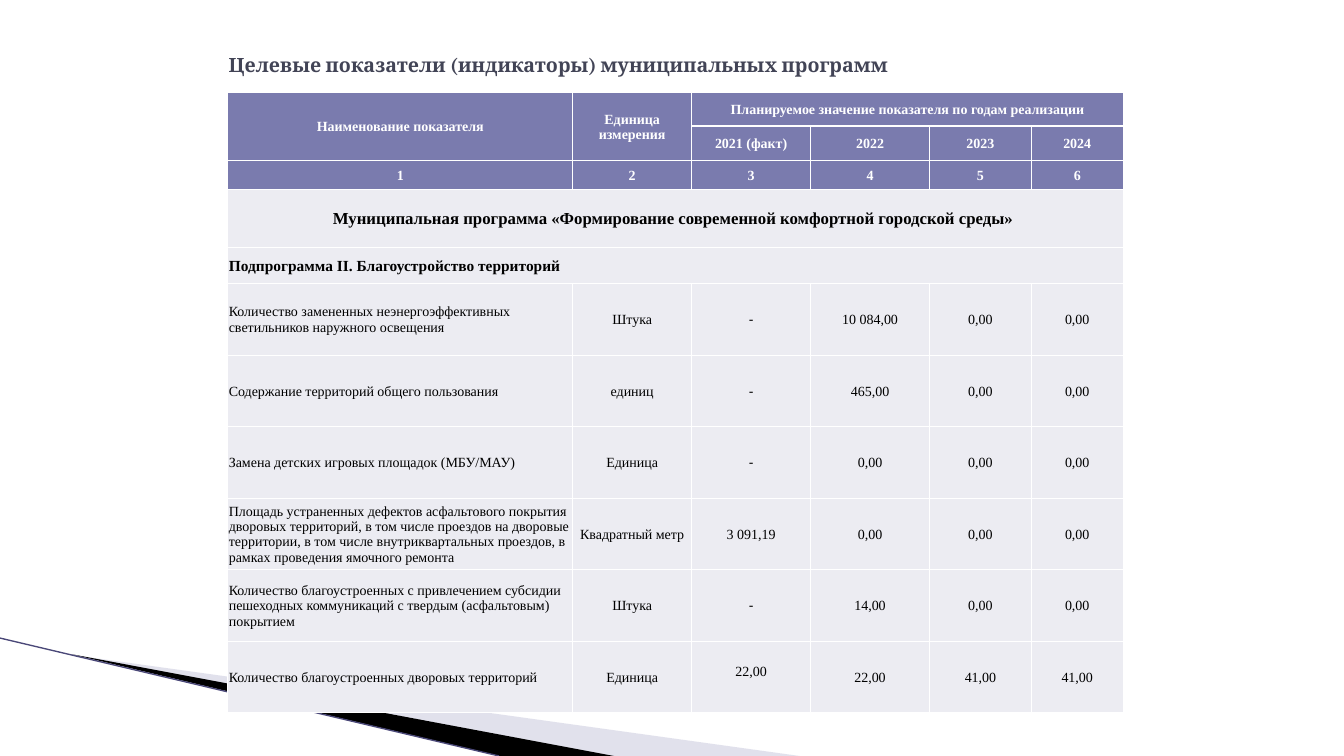
from lxml.etree import SubElement
from pptx import Presentation
from pptx.dml.color import RGBColor
from pptx.enum.shapes import MSO_CONNECTOR
from pptx.enum.text import MSO_ANCHOR, PP_ALIGN
from pptx.oxml.ns import qn
from pptx.util import Inches, Pt

WHITE = RGBColor(0xFF, 0xFF, 0xFF)
BLACK = RGBColor(0, 0, 0)
SLATE = RGBColor(0x42, 0x44, 0x56)
VIOLET = RGBColor(0x7A, 0x7B, 0xAE)
PALE = RGBColor(0xEC, 0xEC, 0xF2)
LILAC = RGBColor(0xB6, 0xB6, 0xD1)
INDIGO = RGBColor(0x4A, 0x48, 0x78)

WIDTHS = [3.42, 1.18, 1.18, 1.18, 1.01, 0.91]
HEIGHTS = [0.33, 0.32, 0.29, 0.57, 0.36] + [0.71] * 6
HEADS = 3
ROWS = [
    ["Наименование показателя", "Единица измерения",
     "Планируемое значение показателя по годам реализации", "", "", ""],
    ["", "", "2021 (факт)", "2022", "2023", "2024"],
    ["1", "2", "3", "4", "5", "6"],
    ["Муниципальная программа «Формирование современной комфортной городской среды» "] + [""] * 5,
    ["Подпрограмма II. Благоустройство территорий"] + [""] * 5,
    ["Количество замененных неэнергоэффективных светильников наружного освещения",
     "Штука", "-", "10 084,00", "0,00", "0,00"],
    ["Содержание территорий общего пользования",
     "единиц", "-", "465,00", "0,00", "0,00"],
    ["Замена детских игровых площадок (МБУ/МАУ)",
     "Единица", "-", "0,00", "0,00", "0,00"],
    ["Площадь устраненных дефектов асфальтового покрытия дворовых территорий, "
     "в том числе проездов на дворовые территории, в том числе внутриквартальных "
     "проездов, в рамках проведения ямочного ремонта",
     "Квадратный метр", "3 091,19", "0,00", "0,00", "0,00"],
    ["Количество благоустроенных с привлечением субсидии пешеходных коммуникаций "
     "с твердым (асфальтовым) покрытием",
     "Штука", "-", "14,00", "0,00", "0,00"],
    ["Количество благоустроенных дворовых территорий",
     "Единица", "22,00", "22,00", "41,00", "41,00"],
]
SPANS = [(0, 0, 1, 0), (0, 1, 1, 1), (0, 2, 0, 5), (3, 0, 3, 5), (4, 0, 4, 5)]


def write(frame, text, size=10, font="Times New Roman", color=BLACK, bold=False,
          align=PP_ALIGN.LEFT):
    part = frame.paragraphs[0]
    part.alignment = align
    run = part.add_run()
    run.text = text
    run.font.size = Pt(size)
    run.font.name = font
    run.font.bold = bold
    run.font.color.rgb = color


class Deck:
    def __init__(self, slide):
        self.slide = slide
        self.shapes = slide.shapes

    def wedge(self, points, color, alpha=None):
        spots = [(Inches(x), Inches(y)) for x, y in points]
        form = self.shapes.build_freeform(*spots[0])
        form.add_line_segments(spots[1:], close=True)
        shape = form.convert_to_shape()
        shape.shadow.inherit = False
        shape.fill.solid()
        shape.fill.fore_color.rgb = color
        shape.line.fill.background()
        if alpha:
            tint = shape.fill._xPr.find(qn("a:solidFill"))[0]
            SubElement(tint, qn("a:alpha"), val=str(alpha * 1000))

    def line(self, start, end, color, width):
        ends = [Inches(v) for v in start + end]
        link = self.shapes.add_connector(MSO_CONNECTOR.STRAIGHT, *ends)
        link.line.color.rgb = color
        link.line.width = Pt(width)
        SubElement(link._element.spPr, qn("a:effectLst"))

    def title(self, text, left, top, width, height):
        box = self.shapes.add_textbox(*map(Inches, (left, top, width, height)))
        frame = box.text_frame
        frame.word_wrap = True
        frame.vertical_anchor = MSO_ANCHOR.MIDDLE
        write(frame, text, size=14, font="Cambria", color=SLATE, bold=True)

    def border(self, cell):
        props = cell._tc.get_or_add_tcPr()
        for place, side in enumerate(("lnL", "lnR", "lnT", "lnB")):
            edge = props.makeelement(qn("a:" + side), {"w": str(Pt(1))})
            fill = SubElement(edge, qn("a:solidFill"))
            SubElement(fill, qn("a:srgbClr"), val=str(WHITE))
            props.insert(place, edge)

    def cell(self, cell, text, fill, **style):
        cell.margin_left = cell.margin_right = cell.margin_top = Inches(0.01)
        cell.margin_bottom = 0
        cell.vertical_anchor = MSO_ANCHOR.MIDDLE
        cell.fill.solid()
        cell.fill.fore_color.rgb = fill
        self.border(cell)
        if text:
            write(cell.text_frame, text, **style)

    def table(self, left, top):
        size = sum(WIDTHS), sum(HEIGHTS)
        grid = self.shapes.add_table(len(ROWS), len(WIDTHS),
                                     *map(Inches, (left, top, *size))).table
        for col, width in zip(grid.columns, WIDTHS):
            col.width = Inches(width)
        for row, height in zip(grid.rows, HEIGHTS):
            row.height = Inches(height)
        for r, row in enumerate(ROWS):
            head = r < HEADS
            for c, text in enumerate(row):
                flush = c == 0 and r > HEADS
                self.cell(grid.cell(r, c), text, VIOLET if head else PALE,
                          size={3: 12, 4: 11}.get(r, 10),
                          font="Arial" if text == "-" else "Times New Roman",
                          color=WHITE if head else BLACK, bold=r < 5,
                          align=PP_ALIGN.LEFT if flush else PP_ALIGN.CENTER)
        for r, c, low, far in SPANS:
            grid.cell(r, c).merge(grid.cell(low, far))
        grid.cell(len(ROWS) - 1, 2).margin_bottom = Inches(0.12)


def main():
    show = Presentation()
    show.slide_width = Inches(13.33)
    show.slide_height = Inches(7.5)
    deck = Deck(show.slides.add_slide(show.slide_layouts[6]))
    deck.wedge([(0.73, 6.5), (7.93, 7.5), (6.08, 7.5)], LILAC, alpha=40)
    deck.wedge([(0.71, 6.49), (6.09, 7.5), (4.96, 7.5)], BLACK)
    deck.line((0, 6.33), (4.95, 7.5), INDIGO, 0.95)
    deck.title("Целевые показатели (индикаторы) муниципальных программ",
               2.17, 0.3, 9, 0.69)
    deck.table(2.26, 0.92)
    show.save("out.pptx")


if __name__ == "__main__":
    main()
